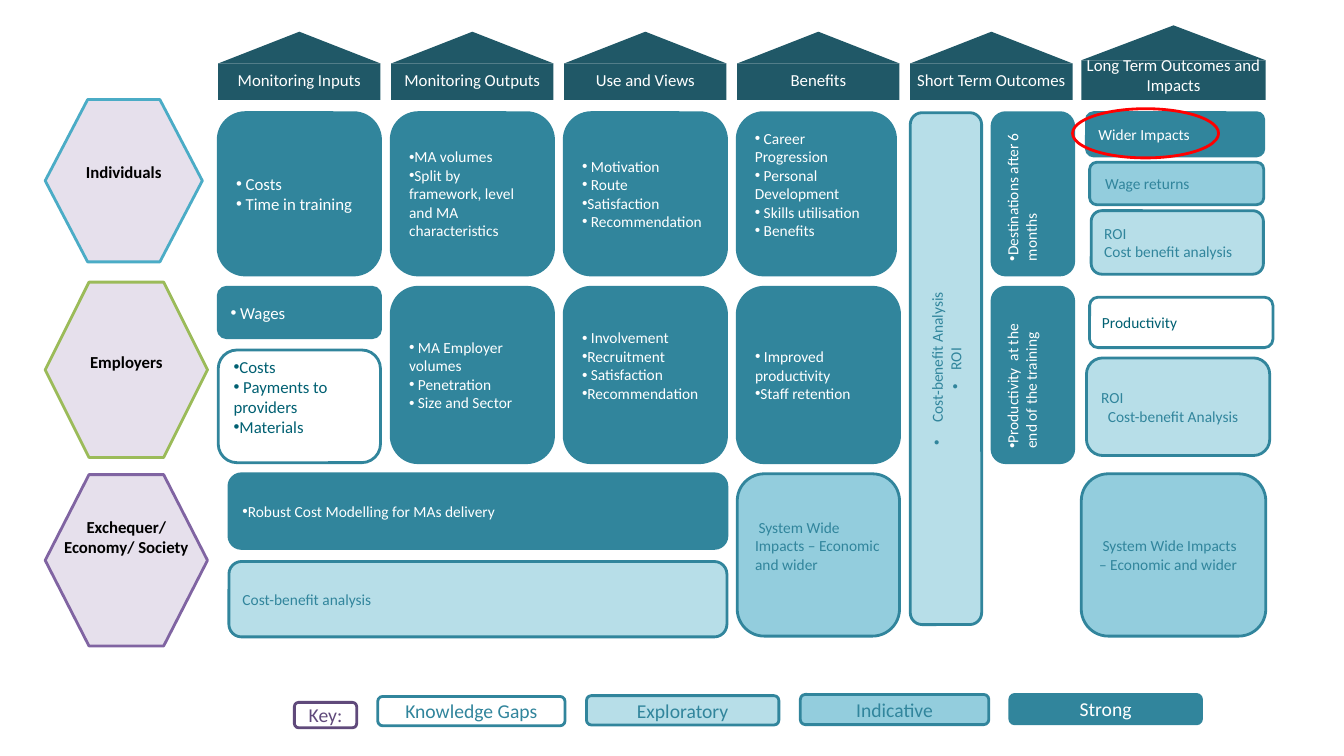
from dataclasses import dataclass
from pptx import Presentation
from pptx.dml.color import RGBColor
from pptx.enum import shapes, text
from pptx.oxml.ns import qn
from pptx.util import Cm, Pt

WHITE = RGBColor(0xFF, 0xFF, 0xFF)
BLACK = RGBColor(0, 0, 0)
RED = RGBColor(0xFF, 0, 0)
LILAC = RGBColor(0xE6, 0xE0, 0xEC)
BLUE = RGBColor(0x4B, 0xAC, 0xC6)
GREEN = RGBColor(0x9B, 0xBB, 0x59)
PURPLE = RGBColor(0x80, 0x64, 0xA2)
DARK_PURPLE = RGBColor(0x60, 0x4A, 0x7B)
DARK_TEAL = RGBColor(0x20, 0x58, 0x67)
DEEP_TEAL = RGBColor(0, 0x60, 0x72)
TEAL = RGBColor(0x31, 0x85, 0x9C)
MID_TEAL = RGBColor(0x93, 0xCD, 0xDD)
PALE_TEAL = RGBColor(0xB7, 0xDE, 0xE8)

# Strength of evidence: fill, text colour
GAP = (WHITE, DEEP_TEAL)
EXPLORATORY = (PALE_TEAL, TEAL)
INDICATIVE = (MID_TEAL, TEAL)
STRONG = (TEAL, WHITE)

COLUMNS = [5.5 + 4.36 * i for i in range(5)]
COLUMN_WIDTH = 4.09
LAST_COLUMN, LAST_WIDTH = 27.25, 4.65
INPUTS, OUTPUTS, VIEWS, BENEFITS, SHORT_TERM = COLUMNS
OUTCOMES, OUTCOMES_WIDTH = 25, 2.06
INDIVIDUALS, EMPLOYERS, SOCIETY = 2.84, 7.24, 11.94
TALL, EMPLOYER_TALL = 4.09, 4.42

HEADINGS = ["Monitoring Inputs", "Monitoring Outputs", "Use and Views",
            "Benefits", "Short Term Outcomes"]
LAST_HEADING = "Long Term Outcomes and Impacts"

# Label, label top, outline, hexagon top, width, height
GROUPS = [
    ("Individuals", 3.94, BLUE, 2.51, 3.96, 4.09),
    ("Employers", 8.74, GREEN, 7.11, 4.09, 4.42),
    ("Exchequer/ Economy/ Society", 12.9, PURPLE, 11.96, 4.09, 4.32),
]
GROUP_LEFT = 1.14


@dataclass
class Box:
    """One evidence box; lines that start with • become bullets."""
    evidence: tuple
    left: float
    top: float
    width: float
    height: float
    lines: list
    size: int = 11
    raised: bool = False      # text sits half a line before the middle
    vertical: bool = False
    centred: bool = False
    indent: float = 0         # hanging indent of bullets
    last_indent: float = 0    # left indent of the last line
    outline: RGBColor = TEAL


BOXES = [
    Box(STRONG, INPUTS, INDIVIDUALS, COLUMN_WIDTH, TALL, ["• Costs", "• Time in training"], 12),
    Box(STRONG, OUTPUTS, INDIVIDUALS, COLUMN_WIDTH, TALL,
        ["•MA volumes", "•Split by framework, level and MA characteristics"]),
    Box(STRONG, VIEWS, INDIVIDUALS, COLUMN_WIDTH, TALL,
        ["• Motivation", "• Route", "•Satisfaction", "• Recommendation"]),
    Box(STRONG, BENEFITS, INDIVIDUALS, 3.99, TALL,
        ["• Career Progression", "• Personal Development", "• Skills utilisation",
         "• Benefits"], raised=True),
    Box(STRONG, INPUTS, EMPLOYERS, COLUMN_WIDTH, 1.27, ["• Wages"], 12),
    Box(GAP, INPUTS, 8.82, COLUMN_WIDTH, 2.84,
        ["•Costs", "• Payments to providers", "•Materials"], 12, raised=True),
    Box(STRONG, OUTPUTS, EMPLOYERS, COLUMN_WIDTH, EMPLOYER_TALL,
        ["• MA Employer volumes", "• Penetration", "• Size and Sector"]),
    Box(STRONG, VIEWS, EMPLOYERS, COLUMN_WIDTH, EMPLOYER_TALL,
        ["• Involvement", "•Recruitment", "• Satisfaction", "•Recommendation"], raised=True),
    Box(STRONG, BENEFITS, EMPLOYERS, COLUMN_WIDTH, EMPLOYER_TALL,
        ["• Improved productivity", "•Staff retention"]),
    Box(STRONG, 5.77, SOCIETY, 12.55, 1.88, ["•Robust Cost Modelling for MAs delivery"]),
    Box(EXPLORATORY, 5.77, 14.15, 12.55, 1.9, ["Cost-benefit analysis"]),
    Box(INDICATIVE, BENEFITS, SOCIETY, COLUMN_WIDTH, TALL,
        [" System Wide Impacts – Economic and wider"], raised=True),
    Box(EXPLORATORY, SHORT_TERM, INDIVIDUALS, 1.8, 12.9, ["• Cost-benefit Analysis", "•ROI"],
        vertical=True, centred=True, indent=0.48),
    Box(STRONG, OUTCOMES, INDIVIDUALS, OUTCOMES_WIDTH, TALL, ["•Destinations after 6 months"],
        raised=True, vertical=True),
    Box(STRONG, OUTCOMES, EMPLOYERS, OUTCOMES_WIDTH, EMPLOYER_TALL,
        ["•Productivity  at the end of the training"], raised=True, vertical=True),
    Box(STRONG, 27.38, INDIVIDUALS, 4.47, 1.09, ["Wider Impacts"]),
    Box(INDICATIVE, 27.46, 4.09, 4.39, 1.07, [" Wage returns"]),
    Box(EXPLORATORY, 27.5, 5.31, 4.34, 1.6, ["ROI", "Cost benefit analysis"]),
    Box(GAP, 27.46, 7.49, 4.62, 1.27, ["Productivity"]),
    Box(EXPLORATORY, 27.38, 9.02, 4.62, 2.46, ["ROI", "Cost-benefit Analysis"],
        last_indent=0.17),
    Box(INDICATIVE, LAST_COLUMN, SOCIETY, LAST_WIDTH, TALL,
        [" System Wide Impacts – Economic and wider"]),
]

KEY = [
    Box((WHITE, DARK_PURPLE), 7.42, 17.7, 1.57, 0.64, ["Key:"], outline=DARK_PURPLE),
    Box((WHITE, TEAL), 9.52, 17.55, 4.72, 0.74, ["Knowledge Gaps"]),
    Box(EXPLORATORY, 14.78, 17.53, 4.85, 0.74, ["Exploratory"]),
    Box(INDICATIVE, 20.17, 17.5, 4.75, 0.76, ["Indicative"]),
    Box(STRONG, 25.45, 17.5, 4.83, 0.74, ["Strong"]),
]

prs = Presentation()
prs.slide_width, prs.slide_height = Cm(33.87), Cm(19.05)
slide = prs.slides.add_slide(prs.slide_layouts[6])


def add_shape(kind, left, top, width, height, fill=None, outline=None):
    shape = slide.shapes.add_shape(kind, Cm(left), Cm(top), Cm(width), Cm(height))
    shape.shadow.inherit = False
    if fill is None:
        shape.fill.background()
    else:
        shape.fill.solid()
        shape.fill.fore_color.rgb = fill
    if outline is None:
        shape.line.fill.background()
    else:
        shape.line.color.rgb = outline
        shape.line.width = Pt(2)
    return shape


def write(paragraph, words, size, color, bold=False, align=text.PP_ALIGN.CENTER):
    paragraph.text = words
    paragraph.alignment = align
    font = paragraph.font
    font.name, font.size, font.bold = "Calibri", Pt(size), bold
    font.color.rgb = color


def set_indent(paragraph, left, first=0):
    properties = paragraph._p.get_or_add_pPr()
    properties.set("marL", str(Cm(left)))
    properties.set("indent", str(Cm(first)))
    return properties


def add_box(box):
    fill, color = box.evidence
    shape = add_shape(shapes.MSO_SHAPE.ROUNDED_RECTANGLE, box.left, box.top,
                      box.width, box.height, fill, box.outline)
    frame = shape.text_frame
    frame.word_wrap = True
    frame.vertical_anchor = text.MSO_ANCHOR.MIDDLE
    if box.vertical:
        frame._txBody.bodyPr.set("vert", "vert270")
    if box.raised and box.vertical:
        frame.margin_right = Cm(0.7)
    elif box.raised:
        frame.margin_bottom = Cm(0.6)
    align = text.PP_ALIGN.CENTER if box.centred else text.PP_ALIGN.LEFT
    for i, line in enumerate(box.lines):
        paragraph = frame.add_paragraph() if i else frame.paragraphs[0]
        write(paragraph, line.removeprefix("•"), box.size, color, align=align)
        if line.startswith("•"):
            properties = set_indent(paragraph, box.indent, -box.indent)
            properties.makeelement(qn("a:buChar"))
            bullet_font = properties.makeelement(qn("a:buFont"), {"typeface": "Arial"})
            bullet = properties.makeelement(qn("a:buChar"), {"char": "•"})
            properties.insert_element_before(bullet_font, "a:tabLst", "a:defRPr", "a:extLst")
            properties.insert_element_before(bullet, "a:tabLst", "a:defRPr", "a:extLst")
    if box.last_indent:
        set_indent(paragraph, box.last_indent)


def add_heading(words, left, width, peak, eaves, text_gap):
    """Draw a house-shaped column heading standing on the common base line."""
    base = 2.52
    add_shape(shapes.MSO_SHAPE.ISOSCELES_TRIANGLE, left, peak, width, eaves - peak, DARK_TEAL)
    wall = add_shape(shapes.MSO_SHAPE.RECTANGLE, left, eaves, width, base - eaves, DARK_TEAL)
    frame = wall.text_frame
    frame.word_wrap = True
    frame.vertical_anchor = text.MSO_ANCHOR.BOTTOM
    frame.margin_left = frame.margin_right = frame.margin_top = 0
    frame.margin_bottom = Cm(text_gap)
    write(frame.paragraphs[0], words, 12, WHITE)


for label, label_top, outline, top, width, height in GROUPS:
    hexagon = add_shape(shapes.MSO_SHAPE.HEXAGON, GROUP_LEFT, top, width, height, LILAC, outline)
    hexagon.adjustments[0] = 0.27
    caption = slide.shapes.add_textbox(Cm(GROUP_LEFT), Cm(label_top), Cm(width), Cm(1.3))
    caption.text_frame.word_wrap = True
    write(caption.text_frame.paragraphs[0], label, 12, BLACK, bold=True)

for heading, left in zip(HEADINGS, COLUMNS):
    add_heading(heading, left, COLUMN_WIDTH, 0.8, 1.6, 0.25)
add_heading(LAST_HEADING, LAST_COLUMN, LAST_WIDTH, 0.64, 1.52, 0.12)

for box in BOXES:
    add_box(box)
for box in KEY:
    box.size, box.centred = 14, True
    add_box(box)

add_shape(shapes.MSO_SHAPE.OVAL, 27.03, 2.74, 3.68, 1.24, outline=RED)

prs.save("out.pptx")
